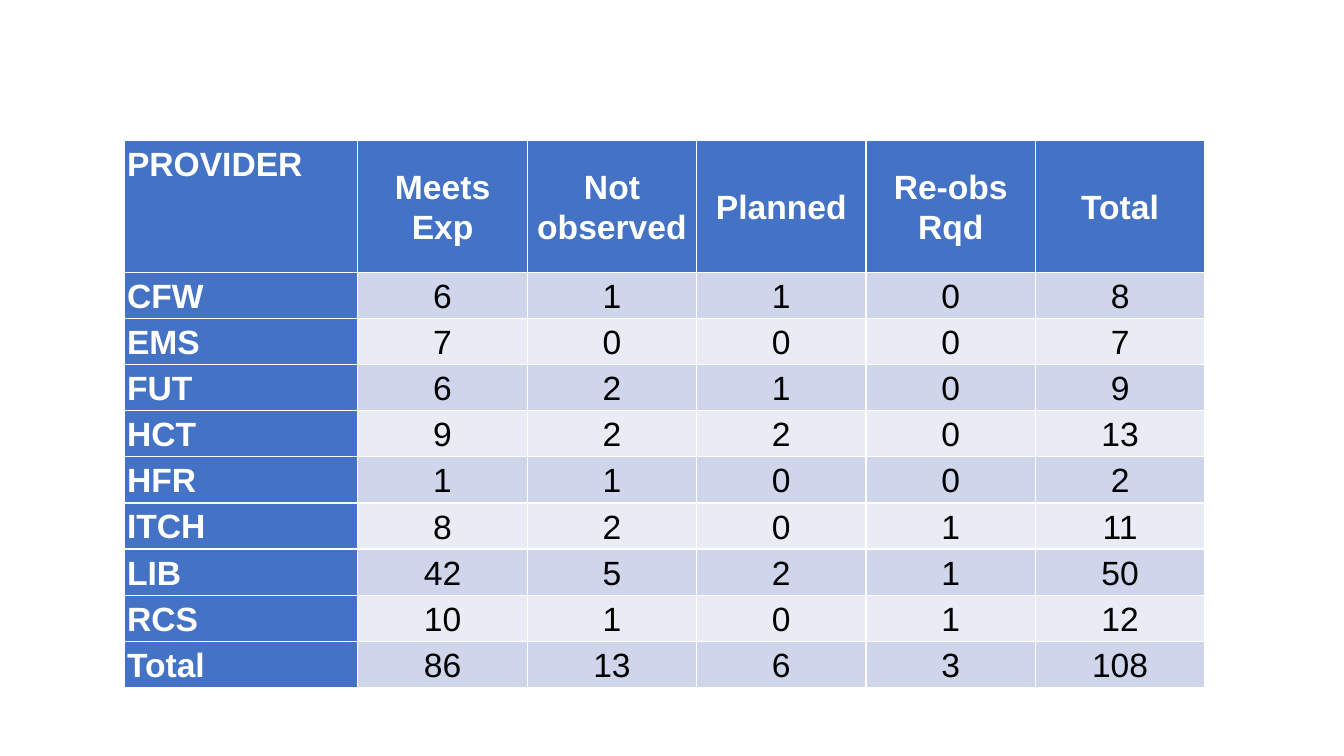
from dataclasses import dataclass

from pptx import Presentation
from pptx.dml.color import RGBColor
from pptx.enum.text import MSO_ANCHOR, PP_ALIGN
from pptx.table import _Cell
from pptx.util import Inches, Pt

WHITE = RGBColor(0xFF, 0xFF, 0xFF)
BLACK = RGBColor(0x00, 0x00, 0x00)
BLUE = RGBColor(0x44, 0x72, 0xC4)
BAND_DARK = RGBColor(0xCF, 0xD5, 0xEA)
BAND_LIGHT = RGBColor(0xE9, 0xEB, 0xF5)

PROVIDER_WIDTH, COUNT_WIDTH = 2.32, 1.68
HEADER_HEIGHT, ROW_HEIGHT = 1.31, 0.45

CELL_FORMAT = {
    f"margin_{side}": Inches(0.03) for side in ("left", "top", "right", "bottom")
}
PARAGRAPH_FORMAT = {"line_spacing": 1.07, "space_after": Pt(8)}
FONT_FORMAT = {"name": "Arial", "size": Pt(24)}


@dataclass(frozen=True)
class ProviderRow:
    provider: str
    counts: tuple[int | str, ...]


HEADER = ProviderRow(
    "PROVIDER", ("Meets Exp", "Not observed", "Planned", "Re-obs Rqd", "Total")
)
PROVIDERS = [
    ProviderRow("CFW", (6, 1, 1, 0, 8)),
    ProviderRow("EMS", (7, 0, 0, 0, 7)),
    ProviderRow("FUT", (6, 2, 1, 0, 9)),
    ProviderRow("HCT", (9, 2, 2, 0, 13)),
    ProviderRow("HFR", (1, 1, 0, 0, 2)),
    ProviderRow("ITCH", (8, 2, 0, 1, 11)),
    ProviderRow("LIB", (42, 5, 2, 1, 50)),
    ProviderRow("RCS", (10, 1, 0, 1, 12)),
    ProviderRow("Total", (86, 13, 6, 3, 108)),
]


def apply_format(target: object, values: dict[str, object]) -> None:
    for name, value in values.items():
        setattr(target, name, value)


def fill_cell(cell: _Cell, text: str, background: RGBColor,
              heading: bool, centred: bool) -> None:
    cell.text = text
    apply_format(cell, CELL_FORMAT)
    cell.fill.solid()
    cell.fill.fore_color.rgb = background
    paragraph = cell.text_frame.paragraphs[0]
    apply_format(paragraph, PARAGRAPH_FORMAT)
    if centred:
        cell.vertical_anchor = MSO_ANCHOR.MIDDLE
        paragraph.alignment = PP_ALIGN.CENTER
    font = paragraph.runs[0].font
    apply_format(font, FONT_FORMAT | {"bold": heading})
    font.color.rgb = WHITE if heading else BLACK


def main() -> None:
    presentation = Presentation()
    presentation.slide_width = Inches(13.33)
    presentation.slide_height = Inches(7.5)
    slide = presentation.slides.add_slide(presentation.slide_layouts[6])

    # Observation table; its default style draws the white borders
    rows = [HEADER, *PROVIDERS]
    count_columns = len(HEADER.counts)
    observations = slide.shapes.add_table(
        len(rows), count_columns + 1, Inches(1.23), Inches(1.39),
        Inches(PROVIDER_WIDTH + count_columns * COUNT_WIDTH),
        Inches(HEADER_HEIGHT + len(PROVIDERS) * ROW_HEIGHT),
    ).table
    observations.first_col = True

    # Column widths and row heights
    for index, column in enumerate(observations.columns):
        column.width = Inches(COUNT_WIDTH if index else PROVIDER_WIDTH)
    for index, row in enumerate(observations.rows):
        row.height = Inches(ROW_HEIGHT if index else HEADER_HEIGHT)

    # Cells: blue headings, banded counts
    for row_index, entry in enumerate(rows):
        band = BAND_DARK if row_index % 2 else BAND_LIGHT
        for column_index, value in enumerate((entry.provider, *entry.counts)):
            heading = row_index == 0 or column_index == 0
            fill_cell(observations.cell(row_index, column_index), str(value),
                      BLUE if heading else band, heading, column_index > 0)

    presentation.save("out.pptx")


if __name__ == "__main__":
    main()
